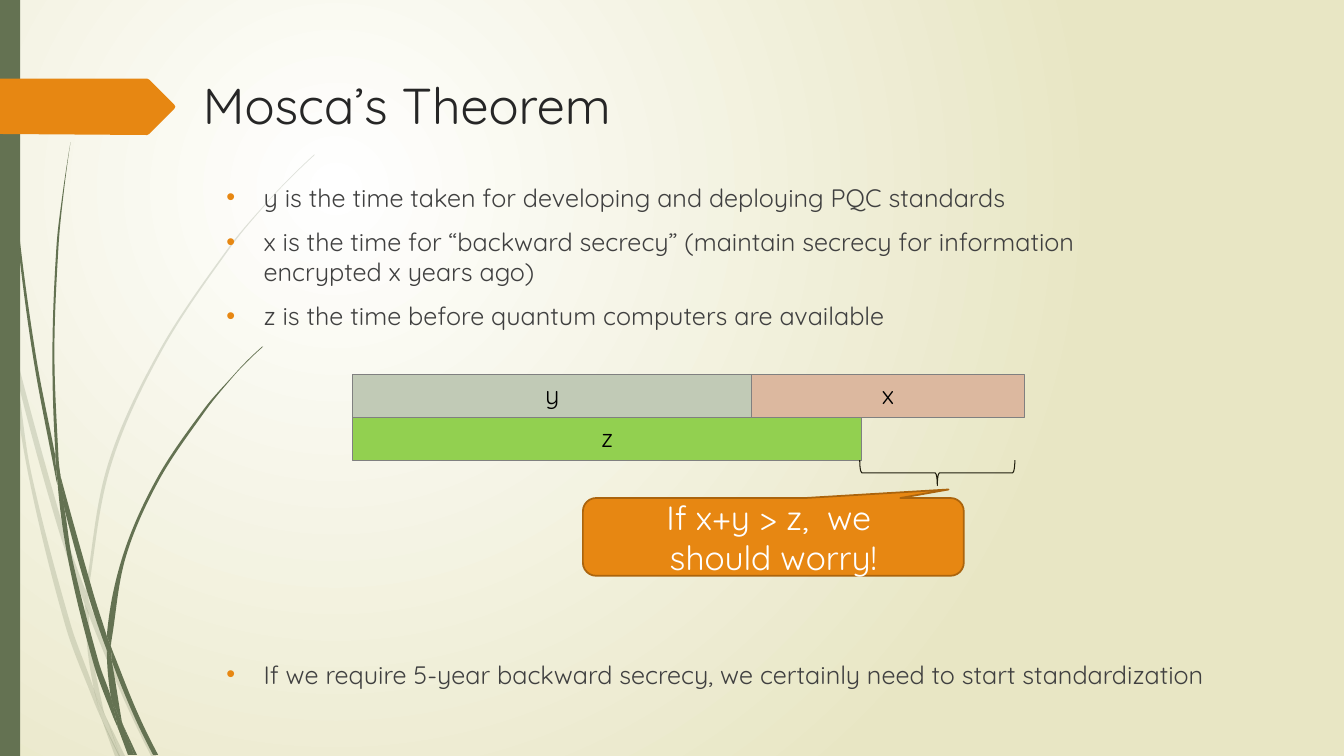
from typing import NamedTuple

from lxml import etree
from pptx import Presentation
from pptx.dml.color import RGBColor
from pptx.enum.shapes import MSO_SHAPE as Preset
from pptx.enum.text import MSO_ANCHOR as Anchor, MSO_AUTO_SIZE as AutoSize, PP_ALIGN as Align
from pptx.oxml.ns import qn
from pptx.util import Cm, Pt

FONT = "Quicksand"
GREEN, ORANGE = "647252", "E78712"
HUNDREDTH_INCH = Cm(0.0254)
Points = list[tuple[float, float]]

class Box(NamedTuple):
    left: float
    top: float
    width: float
    height: float

class Period(NamedTuple):
    label: str
    box: Box
    color: str

class Blade(NamedTuple):
    """Left and right edge from top to bottom, in hundredths of an inch."""
    left: Points
    right: Points

class BulletList(NamedTuple):
    index: int
    box: Box
    items: list[str]

PALE_GRASS = [
    Blade([(0, 299), (10, 344), (11, 350)], [(0, 282), (9, 322), (11, 350)]),
    Blade([(17, 376), (57, 522), (84, 599)], [(14, 345), (62, 520), (85, 586)]),
    Blade([(88, 610), (123, 694), (150, 750)], [(88, 596), (92, 607), (127, 692), (155, 750)]),
    Blade([(105, 711), (119, 750)], [(105, 711), (124, 750)]),
    Blade([(11, 350), (28, 470), (65, 621), (92, 693), (101, 714)],
          [(11, 350), (17, 376), (31, 469), (70, 619), (93, 683), (99, 707), (101, 714)]),
    Blade([(84, 599), (87, 646), (93, 683), (96, 692), (105, 711)],
          [(88, 608), (88, 610), (91, 646), (103, 706), (105, 711)]),
    Blade([(312, 153), (289, 175), (268, 197), (228, 244), (158, 348), (107, 461), (85, 584), (85, 586)],
          [(312, 154), (290, 175), (268, 198), (229, 245), (160, 349), (110, 462), (88, 584), (88, 596)]),
    Blade([(101, 714), (114, 750)], [(101, 714), (119, 750)]),
    Blade([(85, 586), (84, 599)], [(88, 596), (88, 610)]),
    Blade([(93, 683), (99, 707), (101, 714), (118, 750)], [(93, 683), (96, 692), (105, 711), (119, 750)]),
]
DARK_GRASS = [
    Blade([(3, 0), (4, 48), (7, 110), (17, 233), (33, 355), (56, 477), (57, 481)],
          [(4, 0), (5, 48), (8, 109), (19, 232), (36, 355), (55, 453), (55, 457)]),
    Blade([(64, 505), (88, 592), (106, 645)], [(60, 472), (93, 590), (106, 631), (106, 633)]),
    Blade([(111, 656), (132, 708), (152, 749)], [(110, 641), (113, 649), (136, 706), (157, 749)]),
    Blade([(57, 477), (68, 557), (93, 659), (111, 708), (117, 722)],
          [(57, 477), (64, 505), (72, 556), (98, 657), (110, 691), (116, 717), (117, 722)]),
    Blade([(70, 141), (62, 193), (56, 245), (52, 349), (55, 449), (60, 472)],
          [(70, 141), (63, 193), (58, 245), (54, 349), (58, 453), (60, 472)]),
    Blade([(122, 719), (133, 749)], [(122, 719), (136, 749)]),
    Blade([(55, 449), (55, 453), (57, 477), (64, 505)], [(55, 449), (60, 472), (64, 505)]),
    Blade([(260, 344), (245, 358), (231, 373), (203, 405), (156, 474), (122, 551), (106, 631)],
          [(261, 344), (245, 359), (231, 374), (205, 406), (158, 476), (125, 552), (111, 633), (110, 641)]),
    Blade([(117, 722), (127, 749)], [(117, 722), (131, 749)]),
    Blade([(106, 645), (110, 691), (116, 706), (122, 719)],
          [(106, 645), (109, 651), (111, 656), (121, 716), (122, 719)]),
    Blade([(106, 631), (106, 645)], [(110, 641), (111, 656)]),
    Blade([(110, 691), (116, 717), (117, 722), (130, 749)], [(110, 691), (116, 706), (122, 719), (133, 749)]),
]
MARKER = [(0, 78), (146, 78), (148, 79), (173, 104), (174, 106), (173, 108), (148, 133), (146, 134), (0, 133)]

# Timeline: y and x run one after the other, z runs below them
START, TOP, BAR_HEIGHT = 8.89, 9.43, 1.09
Y_WIDTH, X_WIDTH, Z_WIDTH = 10.06, 6.86, 12.83
PERIODS = [
    Period("y", Box(START, TOP, Y_WIDTH, BAR_HEIGHT), "C1CAB6"),
    Period("x", Box(START + Y_WIDTH, TOP, X_WIDTH, BAR_HEIGHT), "DCB89F"),
    Period("z", Box(START, TOP + BAR_HEIGHT, Z_WIDTH, BAR_HEIGHT), "92D050"),
]
LISTS = [
    BulletList(1, Box(5.45, 4.46, 24.71, 4.65), [
        "y is the time taken for developing and deploying PQC standards",
        "x is the time for “backward secrecy” (maintain secrecy for information encrypted x years ago)",
        "z is the time before quantum computers are available"]),
    BulletList(2, Box(5.45, 16.48, 27.9, 2.4), [
        "If we require 5-year backward secrecy, we certainly need to start standardization"]),
]

def rgb(color: str) -> RGBColor:
    return RGBColor.from_string(color)

def paint(shape, fill: str | None, line: str | None = None, weight: float = 0.75) -> None:
    shape.shadow.inherit = False
    for part, color in ((shape.fill, fill), (shape.line.fill, line)):
        if color:
            part.solid()
            part.fore_color.rgb = rgb(color)
        else:
            part.background()
    if line:
        shape.line.width = Pt(weight)

def add_preset(slide, preset: Preset, box: Box, *colors):
    shape = slide.shapes.add_shape(preset, *map(Cm, box))
    paint(shape, *colors)
    return shape

def write(shape, text: str, size: float, color: str, align: Align, anchor: Anchor) -> None:
    frame = shape.text_frame
    frame.text = text
    frame.word_wrap, frame.auto_size, frame.vertical_anchor = True, AutoSize.NONE, anchor
    for paragraph in frame.paragraphs:
        paragraph.alignment = align
        for run in paragraph.runs:
            run.font.name, run.font.size = FONT, Pt(size)
            run.font.color.rgb = rgb(color)

def place(placeholder, box: Box) -> None:
    """Positions a placeholder and brings it to the front."""
    placeholder.left, placeholder.top, placeholder.width, placeholder.height = map(Cm, box)
    placeholder.element.getparent().append(placeholder.element)

def curve_points(edge: Points) -> Points:
    """Two control points and an end point for each span of a smooth edge."""
    slopes = [(x1 - x0) / (y1 - y0) for (x0, y0), (x1, y1) in zip(edge, edge[2:])]
    first, last = [(b[0] - a[0]) / (b[1] - a[1]) for a, b in (edge[:2], edge[-2:])]
    slopes = [2 * first - slopes[0], *slopes, 2 * last - slopes[-1]] if slopes else [first, last]
    points = []
    for (x0, y0), (x1, y1), s0, s1 in zip(edge, edge[1:], slopes, slopes[1:]):
        third = (y1 - y0) / 3
        points += [(x0 + s0 * third, y0 + third), (x1 - s1 * third, y1 - third), (x1, y1)]
    return points

def draw_outline(slide, points: Points, color: str):
    start, *rest = [(x * HUNDREDTH_INCH, y * HUNDREDTH_INCH) for x, y in points]
    builder = slide.shapes.build_freeform(*start)
    builder.add_line_segments(rest, close=True)
    shape = builder.convert_to_shape()
    paint(shape, color)
    return shape

def draw_blade(slide, blade: Blade, opacity: int) -> None:
    down, up = curve_points(blade.left), [blade.right[0], *curve_points(blade.right)][::-1]
    shape = draw_outline(slide, [blade.left[0], *down, *up], GREEN)
    segments = list(shape.element.iter(qn("a:lnTo")))
    # The segment between the two edges stays straight
    for edge in (segments[:len(down)], segments[len(down) + 1:len(down) + len(up)]):
        for i in range(0, len(edge), 3):
            curve = etree.Element(qn("a:cubicBezTo"))
            edge[i].addprevious(curve)
            for segment in edge[i:i + 3]:
                curve.append(segment[0])
                segment.getparent().remove(segment)
    color = shape.element.spPr.find(f"{qn('a:solidFill')}/{qn('a:srgbClr')}")
    if opacity < 100:
        etree.SubElement(color, qn("a:alpha"), val=str(opacity * 1000))

def draw_background(slide) -> None:
    fill = slide.background.fill
    fill.gradient()
    for stop, color in zip(fill.gradient_stops, ("FFFFFF", "E8E6C4")):
        stop.color.rgb = rgb(color)
    gradient = slide.element.find(f".//{qn('a:gradFill')}")
    gradient.remove(gradient.find(qn("a:lin")))
    circle = etree.SubElement(gradient, qn("a:path"), path="circle")
    etree.SubElement(circle, qn("a:fillToRect"), l="50000", t="50000", r="100000", b="100000")

def fill_list(slide, bullets: BulletList) -> None:
    body = slide.placeholders[bullets.index]
    place(body, bullets.box)
    write(body, "\n".join(bullets.items), 18, "404040", Align.LEFT, Anchor.TOP)
    for paragraph in body.text_frame.paragraphs:
        paragraph.space_before = Pt(10)
        props = paragraph._p.get_or_add_pPr()
        props.set("marL", str(Cm(0.94)))
        props.set("indent", str(-Cm(0.94)))
        etree.SubElement(etree.SubElement(props, qn("a:buClr")), qn("a:srgbClr"), val=ORANGE)
        etree.SubElement(props, qn("a:buFont"), typeface="Arial")
        etree.SubElement(props, qn("a:buChar"), char="•")

def main() -> None:
    deck = Presentation()
    deck.slide_width, deck.slide_height = Cm(33.87), Cm(19.05)
    slide = deck.slides.add_slide(deck.slide_layouts[3])
    # Scenery
    draw_background(slide)
    for grass, opacity in ((PALE_GRASS, 20), (DARK_GRASS, 100)):
        for blade in grass:
            draw_blade(slide, blade, opacity)
    add_preset(slide, Preset.RECTANGLE, Box(0, 0, 0.51, 19.05), GREEN)
    draw_outline(slide, MARKER, ORANGE)
    # Title
    place(slide.shapes.title, Box(4.86, 1.73, 27.08, 3.56))
    write(slide.shapes.title, "Mosca’s Theorem", 36, "262626", Align.LEFT, Anchor.TOP)
    # Timeline with the excess of x + y over z
    for period in PERIODS:
        bar = add_preset(slide, Preset.RECTANGLE, period.box, period.color, "808080")
        write(bar, period.label, 18, "000000", Align.CENTER, Anchor.TOP)
    excess = add_preset(slide, Preset.RIGHT_BRACE, Box(23.3, 9.96, 0.64, 3.91), None, "1F1D0D")
    excess.rotation = 90
    warning = add_preset(slide, Preset.ROUNDED_RECTANGULAR_CALLOUT, Box(14.69, 12.55, 9.6, 1.96),
                         ORANGE, "AB640D", 1.25)
    for i, value in enumerate((0.46, -0.61, 0.17)):
        warning.adjustments[i] = value
    write(warning, "If x+y > z,  we \nshould worry!", 24, "FFFFFF", Align.CENTER, Anchor.MIDDLE)
    # Lists
    for bullets in LISTS:
        fill_list(slide, bullets)
    deck.save("out.pptx")

if __name__ == "__main__":
    main()
